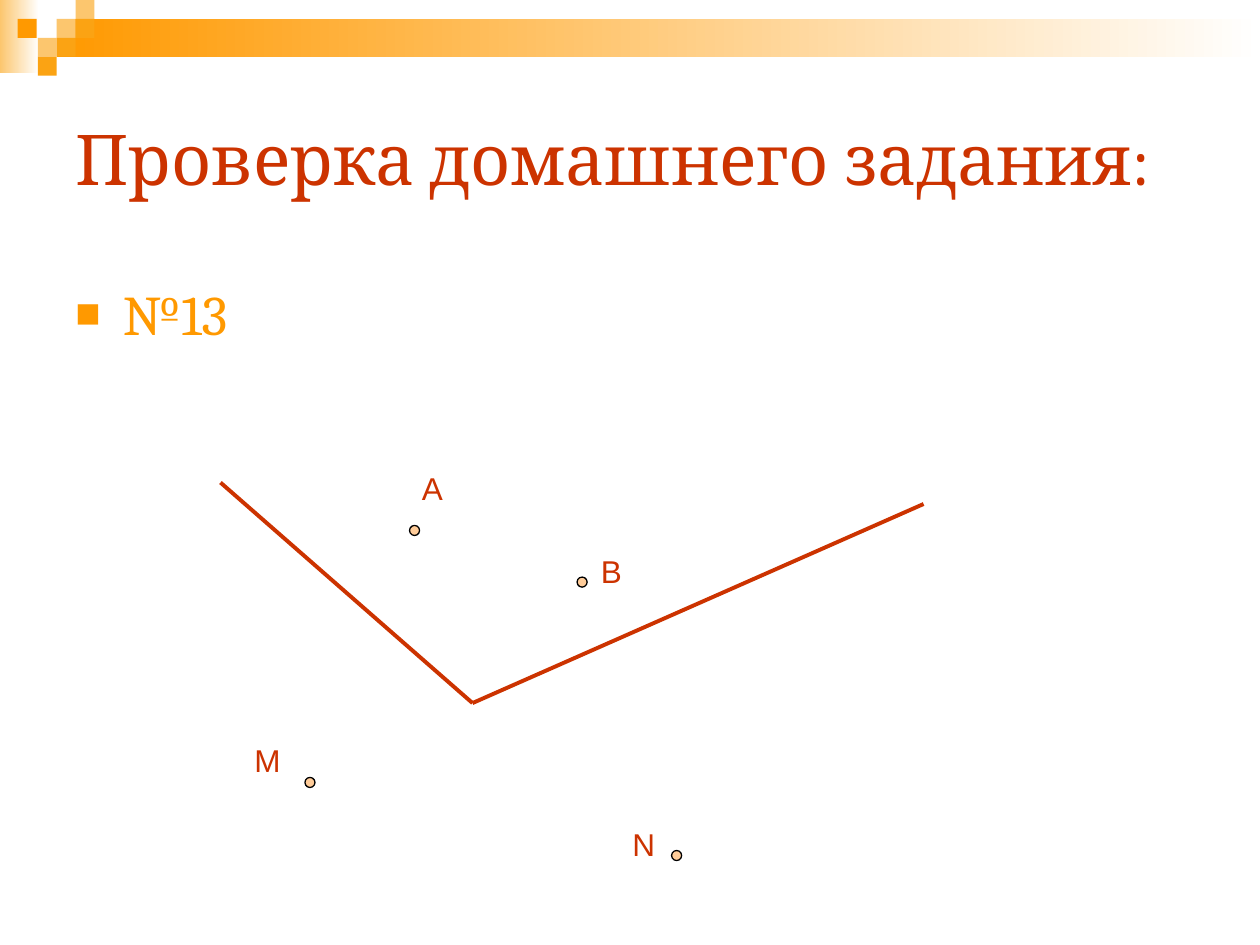
"""Build a geometry homework slide with an angle and four labelled points."""
import pptx
import pptx.dml.color
import pptx.enum.shapes
import pptx.enum.text
import pptx.oxml
import pptx.oxml.ns
import pptx.util
from pptx.dml.color import RGBColor
from pptx.util import Inches

ORANGE = RGBColor(0xFF, 0x99, 0x00)
MID_ORANGE = RGBColor(0xFB, 0xA3, 0x13)
LIGHT_ORANGE = RGBColor(0xFC, 0xC6, 0x6E)
PEACH = RGBColor(0xFF, 0xCC, 0x99)
RED = RGBColor(0xCC, 0x33, 0x00)
WHITE = RGBColor(0xFF, 0xFF, 0xFF)
BLACK = RGBColor(0x00, 0x00, 0x00)

SQUARE = 0.15
DOT = 0.08
MIDDLE = pptx.enum.text.MSO_ANCHOR.MIDDLE
TOP = pptx.enum.text.MSO_ANCHOR.TOP

presentation = pptx.Presentation()
presentation.slide_width = Inches(10)
presentation.slide_height = Inches(7.5)
slide = presentation.slides.add_slide(presentation.slide_layouts[6])


def add_text(text, left, top, width, height, size=18, font="Arial", color=RED, anchor=TOP):
    box = slide.shapes.add_textbox(Inches(left), Inches(top), Inches(width), Inches(height))
    box.text_frame.word_wrap = True
    box.text_frame.vertical_anchor = anchor
    paragraph = box.text_frame.paragraphs[0]
    run = paragraph.add_run()
    run.text = text
    run.font.size = pptx.util.Pt(size)
    run.font.name = font
    run.font.color.rgb = color
    return paragraph


def add_filled(kind, left, top, width, height, color):
    shape = slide.shapes.add_shape(kind, Inches(left), Inches(top), Inches(width), Inches(height))
    shape.shadow.inherit = False
    shape.fill.solid()
    shape.fill.fore_color.rgb = color
    shape.line.fill.background()
    return shape


RECTANGLE = pptx.enum.shapes.MSO_SHAPE.RECTANGLE
OVAL = pptx.enum.shapes.MSO_SHAPE.OVAL

for left, top, width, height, color in [
    (0, 0, 0.31, 0.58, LIGHT_ORANGE),
    (0.45, 0.15, 9.55, 0.3, ORANGE),
]:
    band = add_filled(RECTANGLE, left, top, width, height, color)
    band.fill.gradient()
    band.fill.gradient_angle = 0
    for stop, stop_color, position in zip(band.fill.gradient_stops, (color, WHITE), (0, 1)):
        stop.color.rgb = stop_color
        stop.position = position

for left, top, color in [
    (0.45, 0.15, LIGHT_ORANGE),
    (0.6, 0, LIGHT_ORANGE),
    (0.6, 0.15, MID_ORANGE),
    (0.3, 0.3, LIGHT_ORANGE),
    (0.14, 0.15, ORANGE),
    (0.45, 0.3, MID_ORANGE),
    (0.3, 0.45, MID_ORANGE),
]:
    add_filled(RECTANGLE, left, top, SQUARE, SQUARE, color)

exercise = add_text("№13", 0.5, 2.17, 9, 4.25, size=32, font="Cambria", color=ORANGE)
properties = exercise._p.get_or_add_pPr()
properties.set("marL", str(Inches(0.38)))
properties.set("indent", str(Inches(-0.38)))
namespace = pptx.oxml.ns.nsdecls("a")
for bullet_xml in (
    f'<a:buClr {namespace}><a:srgbClr val="{ORANGE}"/></a:buClr>',
    f'<a:buSzPct {namespace} val="75000"/>',
    f'<a:buFont {namespace} typeface="Arial"/>',
    f'<a:buChar {namespace} char="■"/>',
):
    properties.append(pptx.oxml.parse_xml(bullet_xml))

add_text("Проверка домашнего задания:", 0.5, 0.5, 9, 1.5, size=40, font="Cambria", anchor=MIDDLE)

vertex = (3.75, 5.58)
for start, end in [((1.75, 3.83), vertex), (vertex, (7.33, 4))]:
    ray = slide.shapes.add_connector(
        pptx.enum.shapes.MSO_CONNECTOR.STRAIGHT, *map(Inches, start + end)
    )
    ray.line.color.rgb = RED
    ray.line.width = pptx.util.Pt(2.25)
    ray._element.spPr.append(pptx.oxml.parse_xml(f"<a:effectLst {namespace}/>"))

for label, dot_left, dot_top, label_left, label_top, label_width in [
    ("А", 3.25, 4.17, 3.25, 3.67, 0.58),
    ("В", 4.58, 4.58, 4.67, 4.33, 0.67),
    ("M", 2.42, 6.17, 1.92, 5.83, 0.5),
    ("N", 5.33, 6.75, 4.92, 6.5, 0.5),
]:
    point = add_filled(OVAL, dot_left, dot_top, DOT, DOT, PEACH)
    point.line.color.rgb = BLACK
    point.line.width = pptx.util.Pt(0.75)
    add_text(label, label_left, label_top, label_width, 0.4)

presentation.save("out.pptx")
